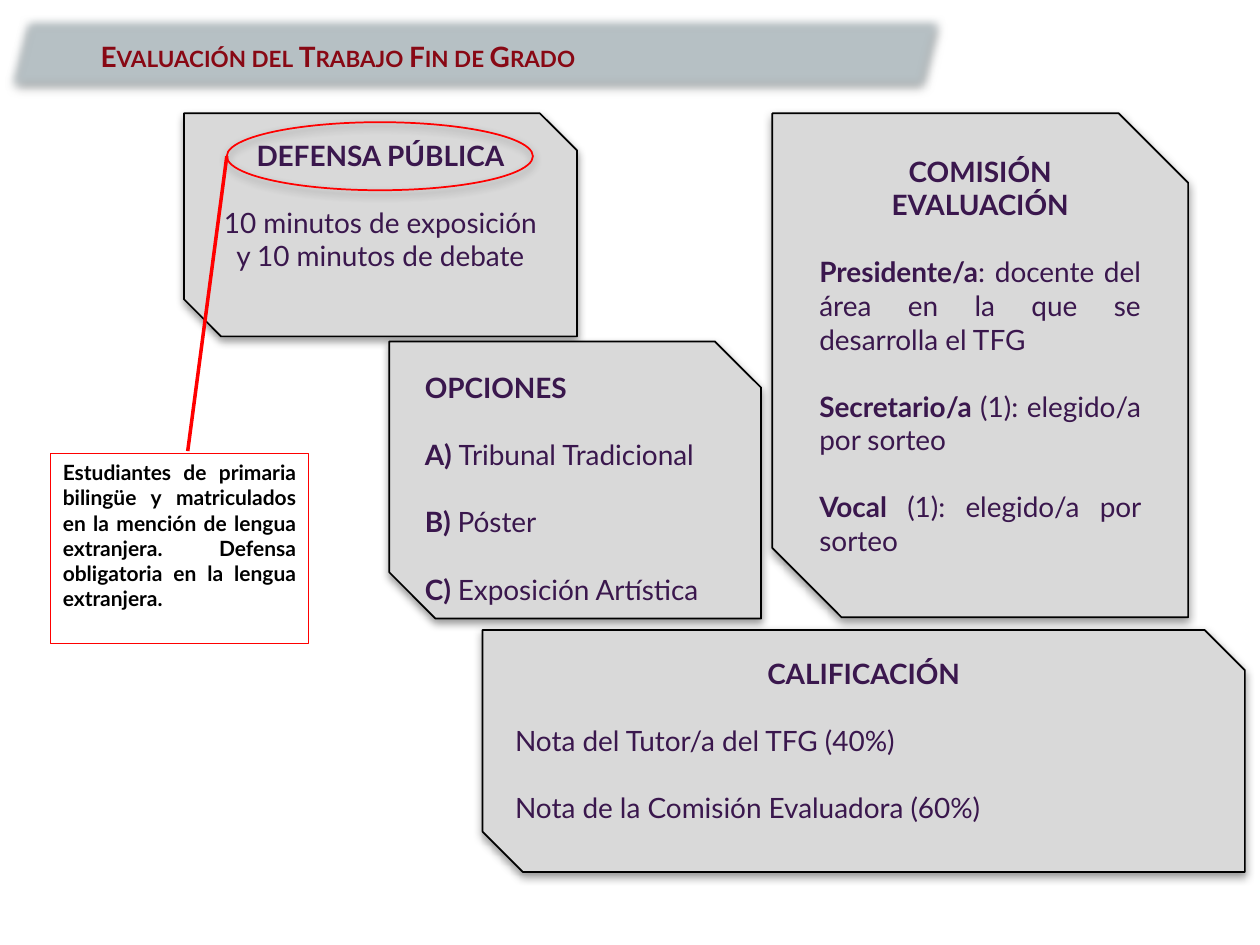
import pptx
import pptx.dml.color
import pptx.enum.shapes
import pptx.enum.text
import pptx.oxml.ns
import pptx.util
from lxml import etree

Inches = pptx.util.Inches
Pt = pptx.util.Pt
RGBColor = pptx.dml.color.RGBColor
SHAPE = pptx.enum.shapes.MSO_SHAPE
ANCHOR = pptx.enum.text.MSO_ANCHOR
ALIGN = pptx.enum.text.PP_ALIGN
LEFT, CENTER, JUSTIFY = ALIGN.LEFT, ALIGN.CENTER, ALIGN.JUSTIFY

BANNER_GREY = RGBColor(0xB6, 0xC0, 0xC4)
PANEL_GREY = RGBColor(0xD9, 0xD9, 0xD9)
MAROON = RGBColor(0x88, 0x08, 0x14)
PURPLE = RGBColor(0x3A, 0x17, 0x4D)
RED = RGBColor(0xFF, 0x00, 0x00)
BLACK = RGBColor(0x00, 0x00, 0x00)
FONT = "Lato"
BLANK_LINE = Pt(19.2)

PANELS = [
    ((1.46, 0.9, 3.12, 1.77), [
        (CENTER, [("DEFENSA PÚBLICA", True)]),
        (CENTER, [("10 minutos de exposición y 10 minutos de debate", False)]),
    ]),
    ((3.09, 2.71, 2.95, 2.2), [
        (LEFT, [("OPCIONES", True)]),
        (LEFT, [("A) ", True), ("Tribunal Tradicional", False)]),
        (LEFT, [("B) ", True), ("Póster", False)]),
        (LEFT, [("C) ", True), ("Exposición Artística", False)]),
    ]),
    ((6.13, 0.9, 3.3, 4), [
        (CENTER, [("COMISIÓN EVALUACIÓN", True)]),
        (JUSTIFY, [("Presidente/a", True),
                   (": docente del área en la que se desarrolla el TFG", False)]),
        (JUSTIFY, [("Secretario/a ", True), ("(1): elegido/a por sorteo", False)]),
        (JUSTIFY, [("Vocal", True), (" (1): elegido/a por sorteo", False)]),
    ]),
    ((3.83, 5, 6.05, 1.92), [
        (CENTER, [("CALIFICACIÓN", True)]),
        (LEFT, [("Nota del Tutor/a del TFG (40%)", False)]),
        (LEFT, [("Nota de la Comisión Evaluadora (60%)", False)]),
    ]),
]
NOTE = ("Estudiantes de primaria bilingüe y matriculados en la mención de lengua "
        "extranjera. Defensa obligatoria en la lengua extranjera.")


def add_element(parent, tag, **attributes):
    """Append a DrawingML element with the given attributes."""
    element = etree.SubElement(parent, pptx.oxml.ns.qn(tag))
    for name, value in attributes.items():
        element.set(name, str(value))
    return element


def add_shadow(shape, opacity=40, blur=5, distance=2):
    """Give a shape a black shadow falling straight down and return its effects."""
    shape.shadow.inherit = False
    effects = shape._element.spPr.find(pptx.oxml.ns.qn("a:effectLst"))
    shadow = add_element(effects, "a:outerShdw", blurRad=int(Pt(blur)),
                         dist=int(Pt(distance)), dir=90 * 60000, rotWithShape=0)
    color = add_element(shadow, "a:srgbClr", val=BLACK)
    add_element(color, "a:alpha", val=opacity * 1000)
    return effects


def add_outline(slide, preset, box, fill=None, line=None, width=1):
    """Add a preset shape with a plain fill and line, either of which may be absent."""
    shape = slide.shapes.add_shape(preset, *map(Inches, box))
    if fill is None:
        shape.fill.background()
    else:
        shape.fill.solid()
        shape.fill.fore_color.rgb = fill
    if line is None:
        shape.line.fill.background()
    else:
        shape.line.color.rgb = line
        shape.line.width = Pt(width)
    shape.shadow.inherit = False
    return shape


def add_run(paragraph, text, color, size=16, bold=True):
    """Add one styled run to a paragraph."""
    run = paragraph.add_run()
    run.text = text
    run.font.name = FONT
    run.font.size = Pt(size)
    run.font.bold = bold
    run.font.color.rgb = color
    return run


def add_banner(slide, title):
    """Add the soft-edged title banner."""
    banner = add_outline(slide, SHAPE.PARALLELOGRAM, (0.01, 0.12, 7.52, 0.61), BANNER_GREY)
    effects = add_shadow(banner, opacity=35, blur=3.1, distance=1.8)
    add_element(effects, "a:softEdge", rad=int(Pt(5)))
    banner.text_frame.vertical_anchor = ANCHOR.MIDDLE
    paragraph = banner.text_frame.paragraphs[0]
    paragraph.alignment = LEFT
    paragraph.line_spacing = 1.15
    paragraph.space_before = paragraph.space_after = Pt(3)
    run = add_run(paragraph, title, MAROON)
    run.font._element.set("cap", "small")


def add_panel(slide, box, paragraphs):
    """Add a grey panel with snipped corners and paragraphs one line apart."""
    panel = add_outline(slide, SHAPE.SNIP_2_DIAG_RECTANGLE, box, PANEL_GREY, BLACK)
    add_shadow(panel)
    frame = panel.text_frame
    frame.word_wrap = True
    frame.vertical_anchor = ANCHOR.TOP
    for index, (alignment, runs) in enumerate(paragraphs):
        paragraph = frame.add_paragraph() if index else frame.paragraphs[0]
        paragraph.alignment = alignment
        if index:
            paragraph.space_before = BLANK_LINE
        for text, bold in runs:
            add_run(paragraph, text, PURPLE, bold=bold)


def add_leader(slide, start, end):
    """Add the red line that ties the highlight to its note."""
    leader = slide.shapes.add_connector(pptx.enum.shapes.MSO_CONNECTOR.STRAIGHT,
                                        *map(Inches, start + end))
    leader.line.color.rgb = RED
    leader.line.width = Pt(2)
    add_element(leader._element.spPr, "a:effectLst")


def add_note(slide, box, text):
    """Add the red-framed note."""
    note = add_outline(slide, SHAPE.RECTANGLE, box, line=RED, width=0.75)
    note.text_frame.word_wrap = True
    note.text_frame.vertical_anchor = ANCHOR.TOP
    paragraph = note.text_frame.paragraphs[0]
    paragraph.alignment = JUSTIFY
    add_run(paragraph, text, BLACK, size=12)


def main():
    """Build and save the slide."""
    deck = pptx.Presentation()
    deck.slide_width, deck.slide_height = Inches(10), Inches(7.5)
    slide = deck.slides.add_slide(deck.slide_layouts[6])
    add_banner(slide, "Evaluación del Trabajo Fin de Grado")
    for box, paragraphs in PANELS:
        add_panel(slide, box, paragraphs)
    highlight = add_outline(slide, SHAPE.OVAL, (1.8, 0.97, 2.43, 0.54), line=RED)
    add_shadow(highlight)
    add_leader(slide, (1.8, 1.24), (1.49, 3.58))
    add_note(slide, (0.4, 3.6, 2.05, 1.51), NOTE)
    deck.save("out.pptx")


if __name__ == "__main__":
    main()
